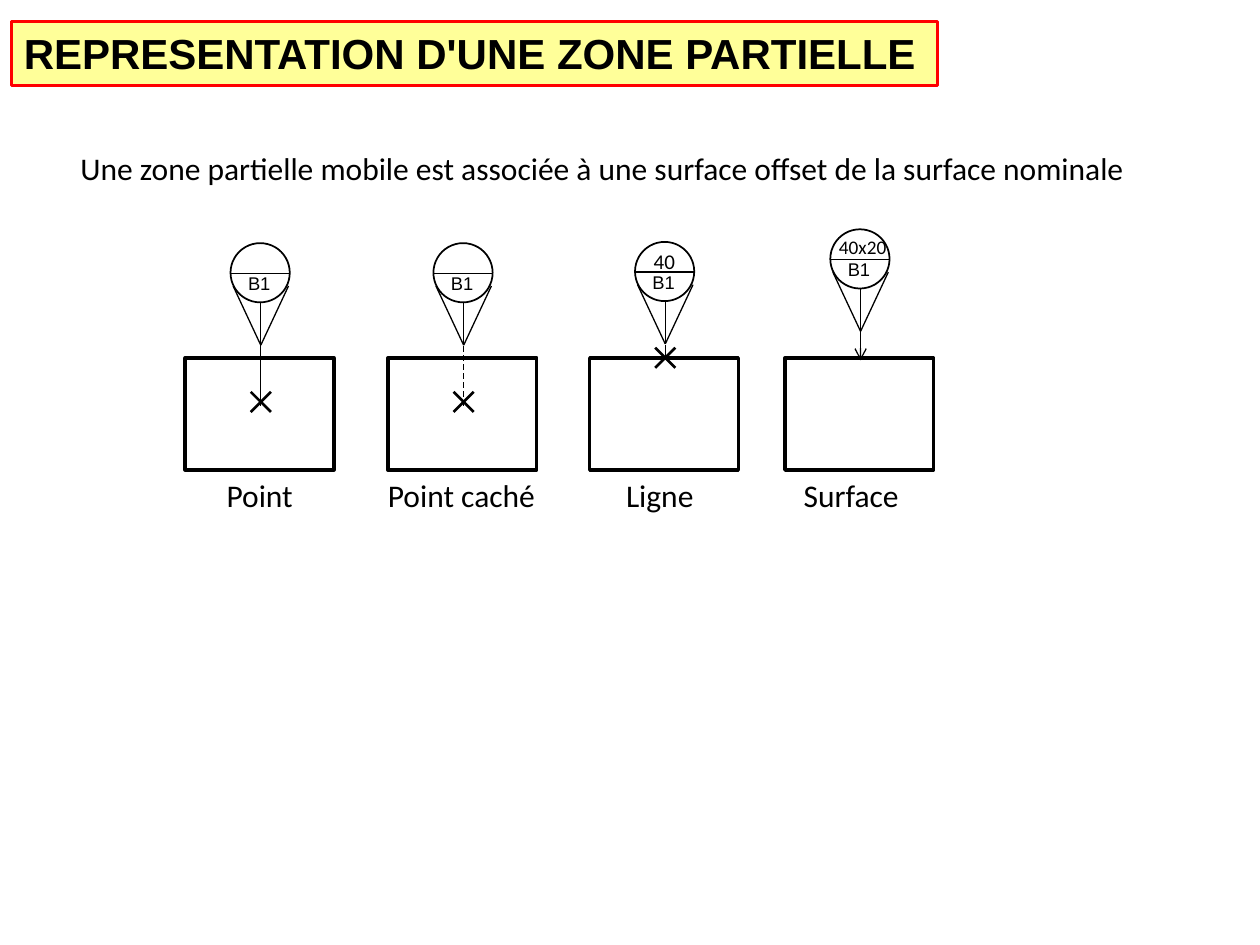
import pptx
import pptx.util
import pptx.dml.color
import pptx.enum.dml
import pptx.enum.shapes
import pptx.enum.text
import pptx.oxml.ns
from lxml import etree
from pptx.util import Inches

COLORS = {"ink": "000000", "title_fill": "FFFF99", "title_line": "FF0000"}
RECTANGLE = pptx.enum.shapes.MSO_SHAPE.RECTANGLE
OVAL = pptx.enum.shapes.MSO_SHAPE.OVAL


def color(name):
    return pptx.dml.color.RGBColor.from_string(COLORS[name])


def write_text(shape, text, size, font="Calibri", bold=False):
    frame = shape.text_frame
    frame.word_wrap = False
    frame.auto_size = pptx.enum.text.MSO_AUTO_SIZE.SHAPE_TO_FIT_TEXT
    frame.vertical_anchor = pptx.enum.text.MSO_ANCHOR.TOP
    paragraph = frame.paragraphs[0]
    paragraph.text = text
    paragraph.alignment = pptx.enum.text.PP_ALIGN.LEFT
    paragraph.font.name = font
    paragraph.font.size = pptx.util.Pt(size)
    paragraph.font.bold = bold
    paragraph.font.color.rgb = color("ink")


def add_text(slide, left, top, width, height, text, size, font="Calibri"):
    box = slide.shapes.add_textbox(
        Inches(left), Inches(top), Inches(width), Inches(height))
    write_text(box, text, size, font)


def add_outline(slide, kind, left, top, width, height, weight,
                line="ink", fill=None):
    shape = slide.shapes.add_shape(
        kind, Inches(left), Inches(top), Inches(width), Inches(height))
    shape.shadow.inherit = False
    if fill:
        shape.fill.solid()
        shape.fill.fore_color.rgb = color(fill)
    else:
        shape.fill.background()
    shape.line.color.rgb = color(line)
    shape.line.width = pptx.util.Pt(weight)
    return shape


def add_line(slide, x1, y1, x2, y2, weight=0.75, dashed=False, arrow=False):
    line = slide.shapes.add_connector(
        pptx.enum.shapes.MSO_CONNECTOR.STRAIGHT,
        Inches(x1), Inches(y1), Inches(x2), Inches(y2))
    line.line.color.rgb = color("ink")
    line.line.width = pptx.util.Pt(weight)
    if dashed:
        line.line.dash_style = pptx.enum.dml.MSO_LINE.DASH
    if arrow:
        etree.SubElement(line.line._get_or_add_ln(),
                         pptx.oxml.ns.qn("a:tailEnd"), type="arrow")
    etree.SubElement(line._element.spPr, pptx.oxml.ns.qn("a:effectLst"))


def add_cross(slide, x, y):
    for rise in (0.08, -0.08):
        add_line(slide, x - 0.08, y + rise, x + 0.08, y - rise, weight=1.5)


def add_flag(slide, left, top, value):
    axis = left + 0.24
    add_outline(slide, OVAL, left, top, 0.47, 0.47, 1)
    add_line(slide, left, top + 0.24, left + 0.47, top + 0.24)
    add_text(slide, left + 0.04, top + 0.18, 0.38, 0.28, "B1", 10.5, "Arial")
    for side in (-0.22, 0.22):
        add_line(slide, axis + side, top + 0.34, axis, top + 0.81)
    add_line(slide, axis, top + 0.47, axis, top + 0.81)
    if value:
        text, offset, width, size = value
        add_text(slide, left + offset, top, width, 0.3, text, size)


def add_target(slide, left, top, label, label_offset, label_width, flag_top,
               leader, cross=None, value=None, dashed=False, arrow=False):
    axis = left + 0.6
    add_outline(slide, RECTANGLE, left, top, 1.18, 0.89, 2)
    add_flag(slide, left + 0.36, top + flag_top, value)
    start, end = leader
    add_line(slide, axis, top + start, axis, top + end,
             dashed=dashed, arrow=arrow)
    if cross is not None:
        add_cross(slide, axis, top + cross)
    add_text(slide, left + label_offset, top + 0.89, label_width, 0.4,
             label, 18)


def add_title(slide, left, top, width, height):
    title = add_outline(slide, RECTANGLE, left, top, width, height, 1.5,
                        "title_line", "title_fill")
    write_text(title, "REPRESENTATION D'UNE ZONE PARTIELLE", 24, "Arial", True)


def main():
    presentation = pptx.Presentation()
    presentation.slide_width = Inches(10)
    presentation.slide_height = Inches(7.5)
    slide = presentation.slides.add_slide(presentation.slide_layouts[6])

    top = 2.84
    add_target(slide, 1.47, top, "Point", 0.23, 0.73, -0.91,
               (-0.1, 0.38), cross=0.35)
    add_target(slide, 3.08, top, "Point caché", -0.1, 1.38, -0.91,
               (0.38, -0.1), cross=0.35, dashed=True)
    add_target(slide, 4.68, top, "Ligne", 0.19, 0.75, -0.92,
               (-0.1, 0), cross=0, value=("40", 0.05, 0.37, 12))
    add_target(slide, 6.23, top, "Surface", 0.05, 0.96, -1.02,
               (-0.42, 0.02), value=("40x20", -0.03, 0.58, 11), arrow=True)

    add_title(slide, 0.09, 0.17, 7.35, 0.51)
    add_text(slide, 0.54, 1.13, 8.59, 0.4,
             "Une zone partielle mobile est associée à une surface offset "
             "de la surface nominale", 18)
    presentation.save("out.pptx")


if __name__ == "__main__":
    main()
